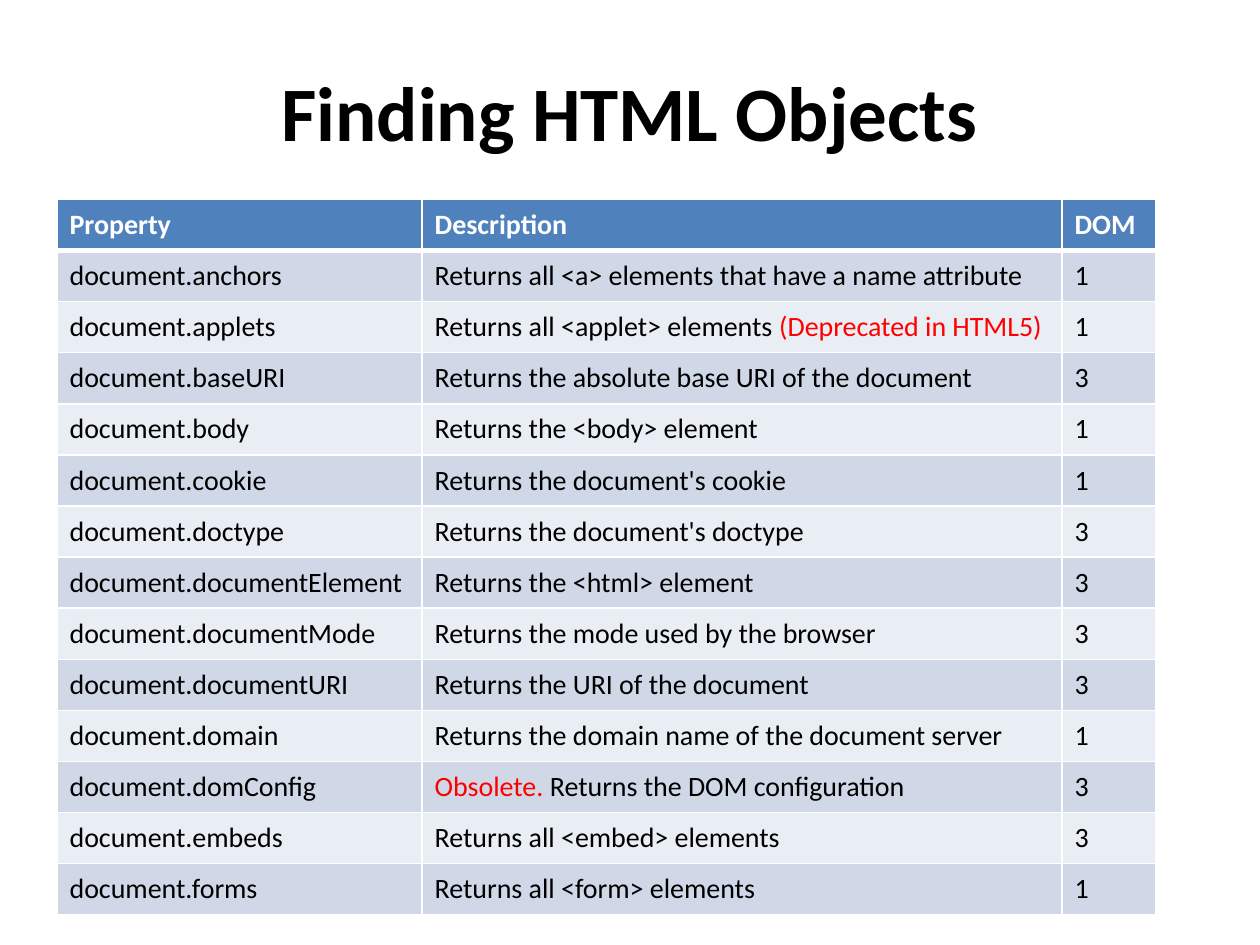
from lxml import etree
from pptx import Presentation
from pptx.dml.color import RGBColor
from pptx.enum import text
from pptx.oxml import ns
from pptx.util import Cm, Pt

TITLE = "Finding HTML Objects"
HEADER = ("Property", "Description", "DOM")

# Property, description, DOM level; a description may be a list of (text, colour) runs
ROWS = [
    ("document.anchors", "Returns all <a> elements that have a name attribute", 1),
    ("document.applets", [("Returns all <applet> elements ", "black"),
                          ("(Deprecated in HTML5)", "red")], 1),
    ("document.baseURI", "Returns the absolute base URI of the document", 3),
    ("document.body", "Returns the <body> element", 1),
    ("document.cookie", "Returns the document's cookie", 1),
    ("document.doctype", "Returns the document's doctype", 3),
    ("document.documentElement", "Returns the <html> element", 3),
    ("document.documentMode", "Returns the mode used by the browser", 3),
    ("document.documentURI", "Returns the URI of the document", 3),
    ("document.domain", "Returns the domain name of the document server", 1),
    ("document.domConfig", [("Obsolete.", "red"),
                            (" Returns the DOM configuration", "black")], 3),
    ("document.embeds", "Returns all <embed> elements", 3),
    ("document.forms", "Returns all <form> elements", 1),
]

COLORS = {
    "black": "000000",
    "white": "FFFFFF",
    "red": "FF0000",
    "header": "4F81BD",
    "odd": "D0D8E8",
    "even": "E9EDF4",
}
FONT = "Calibri"
COLUMN_WIDTHS = (7.36, 12.9, 1.88)
ROW_HEIGHT = 1.03


def rgb(name):
    return RGBColor.from_string(COLORS[name])


def style(paragraph, size, color, bold):
    font = paragraph.font
    font.name, font.size, font.bold = FONT, Pt(size), bold
    font.color.rgb = rgb(color)


def add_borders(cell, bottom_width):
    properties = cell._tc.get_or_add_tcPr()
    for side, width in (("L", 1), ("R", 1), ("T", 1), ("B", bottom_width)):
        line = etree.SubElement(properties, ns.qn(f"a:ln{side}"), w=str(Pt(width)))
        fill = etree.SubElement(line, ns.qn("a:solidFill"))
        etree.SubElement(fill, ns.qn("a:srgbClr"), val=COLORS["white"])


def fill_cell(cell, content, fill, color, bold, bottom_width):
    add_borders(cell, bottom_width)
    cell.fill.solid()
    cell.fill.fore_color.rgb = rgb(fill)
    cell.vertical_anchor = text.MSO_ANCHOR.MIDDLE
    paragraph = cell.text_frame.paragraphs[0]
    style(paragraph, 16, color, bold)
    runs = content if isinstance(content, list) else [(str(content), color)]
    for words, run_color in runs:
        run = paragraph.add_run()
        run.text = words
        run.font.color.rgb = rgb(run_color)


presentation = Presentation()
presentation.slide_width, presentation.slide_height = Cm(25.4), Cm(19.05)
slide = presentation.slides.add_slide(presentation.slide_layouts[6])

# Property table
lines = [HEADER, *ROWS]
table = slide.shapes.add_table(
    len(lines), len(HEADER), Cm(1.15), Cm(4.02),
    Cm(sum(COLUMN_WIDTHS)), Cm(ROW_HEIGHT * len(lines))).table
for column, width in zip(table.columns, COLUMN_WIDTHS):
    column.width = Cm(width)
for index, line in enumerate(lines):
    table.rows[index].height = Cm(ROW_HEIGHT)
    if index == 0:
        look = ("header", "white", True, 3)
    else:
        look = ("odd" if index % 2 else "even", "black", False, 1)
    for cell, content in zip(table.rows[index].cells, line):
        fill_cell(cell, content, *look)

# Title
title = slide.shapes.add_textbox(Cm(1.27), Cm(0.64), Cm(22.86), Cm(3.18))
frame = title.text_frame
frame.word_wrap = True
frame.vertical_anchor = text.MSO_ANCHOR.MIDDLE
paragraph = frame.paragraphs[0]
paragraph.text = TITLE
paragraph.alignment = text.PP_ALIGN.CENTER
style(paragraph, 44, "black", True)

presentation.save("out.pptx")
